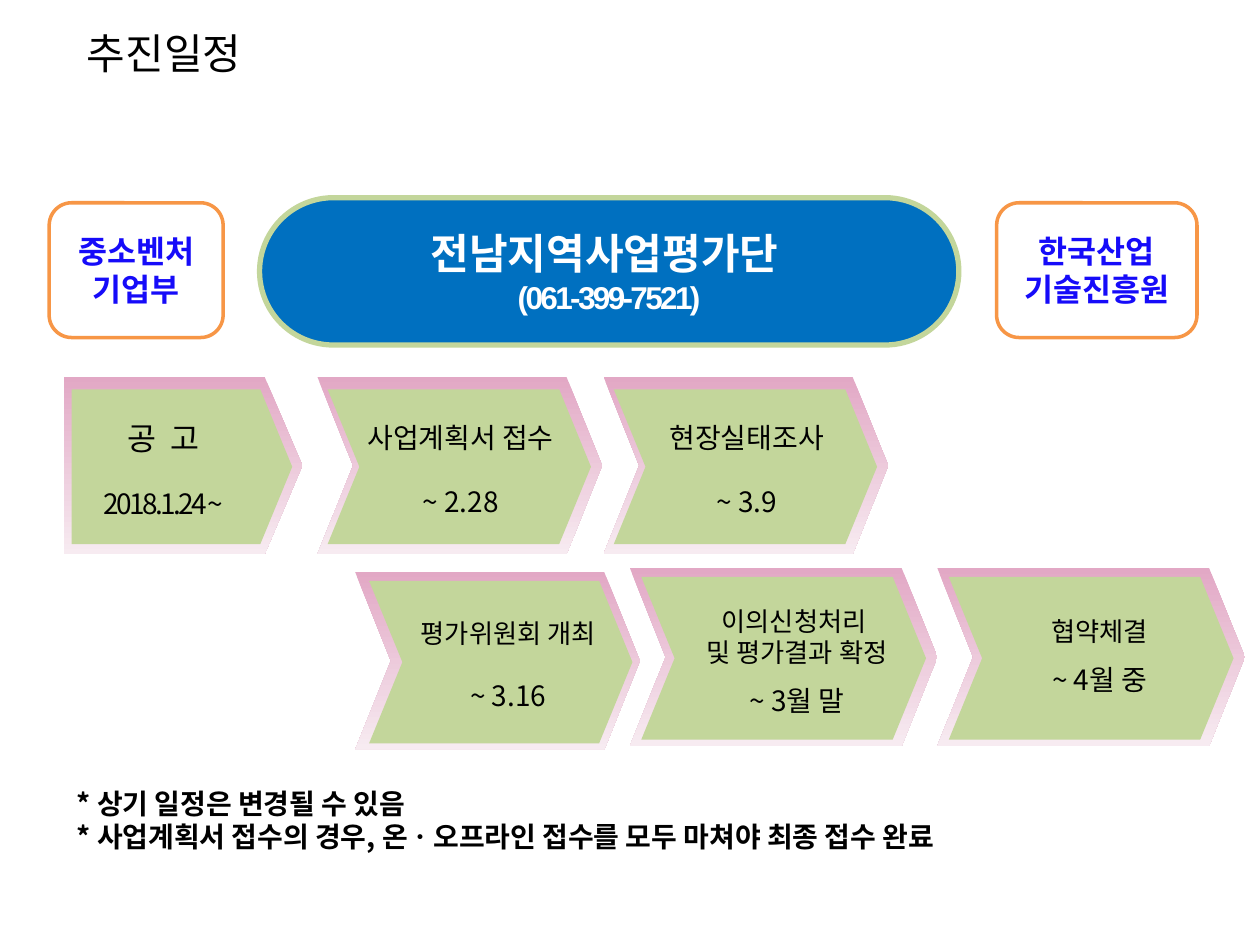
from pptx import Presentation
from pptx import util as u
from pptx.dml.color import RGBColor
from pptx.enum import shapes, text
from pptx.oxml.ns import qn
from lxml import etree

Pt = u.Pt
SHAPE = shapes.MSO_SHAPE
KOREAN = "Noto Sans CJK KR"
GREEN = "C3D69B"


def color(hex_value):
    return RGBColor.from_string(hex_value)


def add_run(paragraph, words, size, hex_value="000000", face=KOREAN, bold=False, spacing=0):
    run = paragraph.add_run()
    run.text = words
    for name, value in dict(size=Pt(size), name=face, bold=bold).items():
        setattr(run.font, name, value)
    run.font.color.rgb = color(hex_value)
    properties = run._r.get_or_add_rPr()
    if spacing:
        properties.set("spc", str(int(spacing * 100)))
    if face == KOREAN:
        etree.SubElement(properties, qn("a:ea")).set("typeface", face)


def fill_text(frame, lines, wrap=True, align=text.PP_ALIGN.CENTER,
              anchor=text.MSO_ANCHOR.MIDDLE):
    """Each line is (runs, space before); each run is a dict for add_run."""
    for name, value in dict(word_wrap=wrap, vertical_anchor=anchor).items():
        setattr(frame, name, value)
    for index, (runs, gap) in enumerate(lines):
        paragraph = frame.add_paragraph() if index else frame.paragraphs[0]
        paragraph.alignment = align
        if gap:
            paragraph.space_before = Pt(gap)
        for run in runs:
            add_run(paragraph, **run)


def add_block(slide, kind, box, adjust=None):
    block = slide.shapes.add_shape(kind, *map(Pt, box))
    block.shadow.inherit = False
    block.line.fill.background()
    if adjust is not None:
        block.adjustments[0] = adjust
    return block


def fill_solid(block, hex_value):
    block.fill.solid()
    block.fill.fore_color.rgb = color(hex_value)


def add_title(slide, box, words):
    title = slide.shapes.title
    for name, value in zip(("left", "top", "width", "height"), box):
        setattr(title, name, Pt(value))
    fill_text(title.text_frame, [([dict(words=words, size=24)], 0)],
              wrap=False, align=text.PP_ALIGN.LEFT)


def add_agency(slide, box, fill, border, weight, lines, adjust=None, wrap=True):
    agency = add_block(slide, SHAPE.ROUNDED_RECTANGLE, box, adjust)
    fill_solid(agency, fill)
    agency.line.color.rgb = color(border)
    agency.line.width = Pt(weight)
    fill_text(agency.text_frame, [([line], 0) for line in lines], wrap)


def add_step(slide, box, inset, label_width, label_shift, lines,
             kind=SHAPE.CHEVRON, adjusts=(0.201, 0.205)):
    left, top, width, height = box
    dx, dy, trim_x, trim_y = inset
    # Pink frame fading downwards
    frame = add_block(slide, kind, box, adjusts[0])
    frame.fill.gradient()
    frame.fill.gradient_angle = 270
    for stop, position, shade in zip(frame.fill.gradient_stops, (0, 1), ("E2A8C5", "F7EBF1")):
        stop.position = position
        stop.color.rgb = color(shade)
    # Green face
    face = add_block(slide, kind, (left + dx, top + dy, width - trim_x, height - trim_y),
                     adjusts[1])
    fill_solid(face, GREEN)
    # Step name and date
    label_height = 70
    label_box = (left + (width - label_width) / 2 + label_shift[0],
                 top + (height - label_height) / 2 + label_shift[1],
                 label_width, label_height)
    label = slide.shapes.add_textbox(*map(Pt, label_box))
    fill_text(label.text_frame, lines, wrap=False)


def step_lines(names, date, size, gap, name_spacing=0, date_spacing=0):
    lines = [([dict(words=name, size=size, spacing=name_spacing)], 0) for name in names]
    return lines + [([dict(words=date, size=16, spacing=date_spacing)], gap)]


def add_notes(slide, box, lines):
    remarks = slide.shapes.add_textbox(*map(Pt, box))
    fill_text(remarks.text_frame, [(line, 0) for line in lines],
              align=text.PP_ALIGN.LEFT, anchor=text.MSO_ANCHOR.TOP)


def add_schedule(slide):
    height, top_1, top_2 = 101.5, 215.3, 324.7
    wide_gap, narrow_gap = 17.4, 8.7
    # First row
    add_step(slide, (36.7, top_1, 136.1, height), (4.3, 7.2, 10.1, 13), 116.6, (-11.2, 2.2),
             step_lines(["공 고"], "2018.1.24 ~", 18, wide_gap, 2, -1.5),
             SHAPE.PENTAGON, (0.213, 0.206))
    for left, width, name, date in ((181.4, 126.7, "사업계획서 접수", "~ 2.28"),
                                    (344.9, 139, "현장실태조사", "~ 3.9")):
        add_step(slide, (left, top_1, 162.7, height), (5.8, 7.2, 12.2, 13), width, (0.5, 2.2),
                 step_lines([name], date, 16, wide_gap))
    # Second row
    add_step(slide, (203, top_2 + 2.2, 162.7, height), (7.9, 5, 12.2, 8.6), 139, (6.1, 2.2),
             step_lines(["평가위원회 개최"], "~ 3.16", 15, wide_gap))
    for left, shift, names, date in (
            (360, (7.6, 2.2), ["이의신청처리 ", "및 평가결과 확정"], "~ 3월 말"),
            (535.7, (4.7, -0.7), ["협약체결"], "~ 4월 중")):
        add_step(slide, (left, top_2, 175.7, height), (6.5, 5, 13, 8.6), 150.5, shift,
                 step_lines(names, date, 15, narrow_gap))


def add_agencies(slide):
    side = dict(size=18, hex_value="160BF9", face="Arial", bold=True)
    center = dict(hex_value="FFFFFF", face="Arial", bold=True)
    for box, names in (((28.1, 115.9, 99.4, 77), ["중소벤처기업부"]),
                       ((569.5, 115.9, 114.5, 77), ["한국산업", "기술진흥원"])):
        add_agency(slide, box, "FFFFFF", "F79646", 2, [dict(side, words=name) for name in names])
    add_agency(slide, (148.3, 113, 399.6, 84.2), "0070C0", GREEN, 3,
               [dict(center, words="전남지역사업평가단 ", size=24),
                dict(center, words="(061-399-7521)", size=18, spacing=-1.5)],
               adjust=0.5, wrap=False)


def main():
    deck = Presentation()
    deck.slide_width, deck.slide_height = Pt(720), Pt(540)
    slide = deck.slides.add_slide(deck.slide_layouts[5])
    add_title(slide, (42.5, 12.2, 111.6, 36), "추진일정")
    add_schedule(slide)
    add_agencies(slide)
    bold = dict(size=16, bold=True)
    add_notes(slide, (36.7, 445.7, 643.7, 46), [
        [dict(bold, words="* 상기 일정은 변경될 수 있음")],
        [dict(bold, words="* 사업계획서 접수의 경우, 온"),
         dict(bold, words="ㆍ", face="Arial", spacing=-1.5),
         dict(bold, words="오프라인 접수를 모두 마쳐야 최종 접수 완료")]])
    deck.save("out.pptx")


if __name__ == "__main__":
    main()
